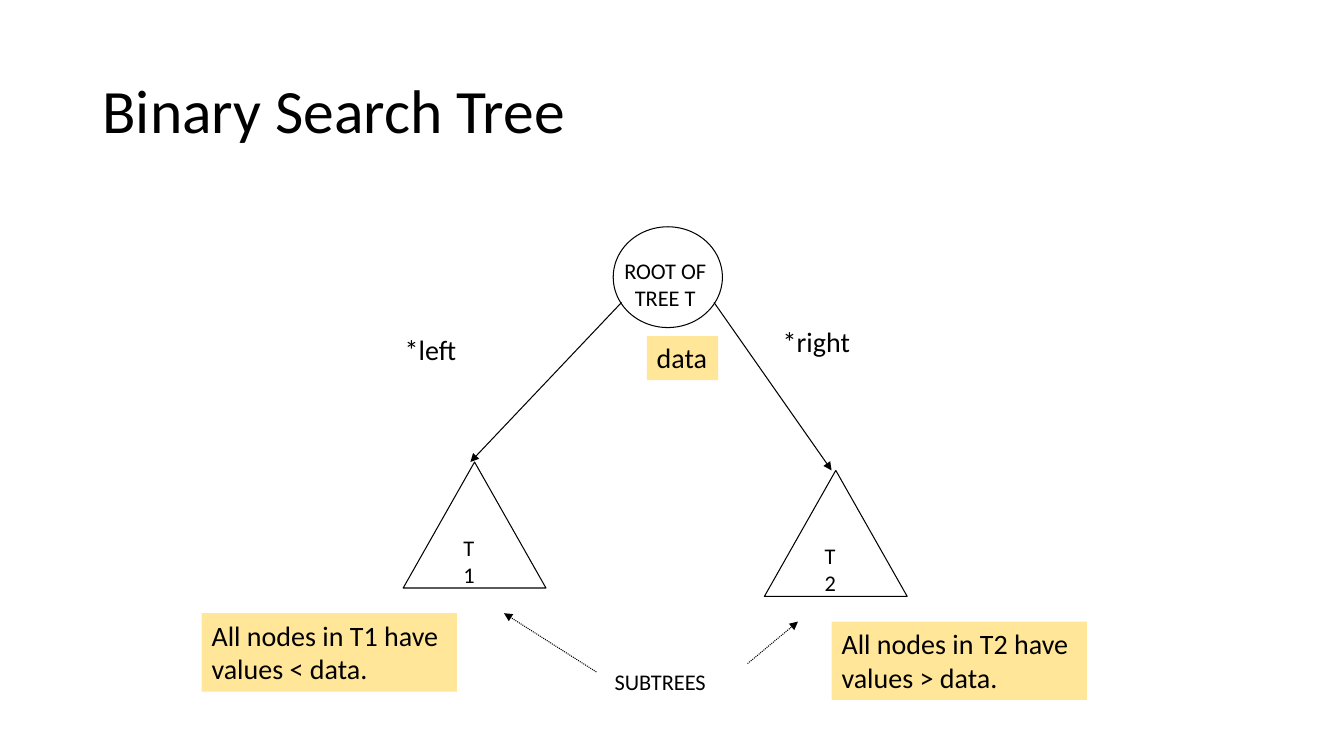
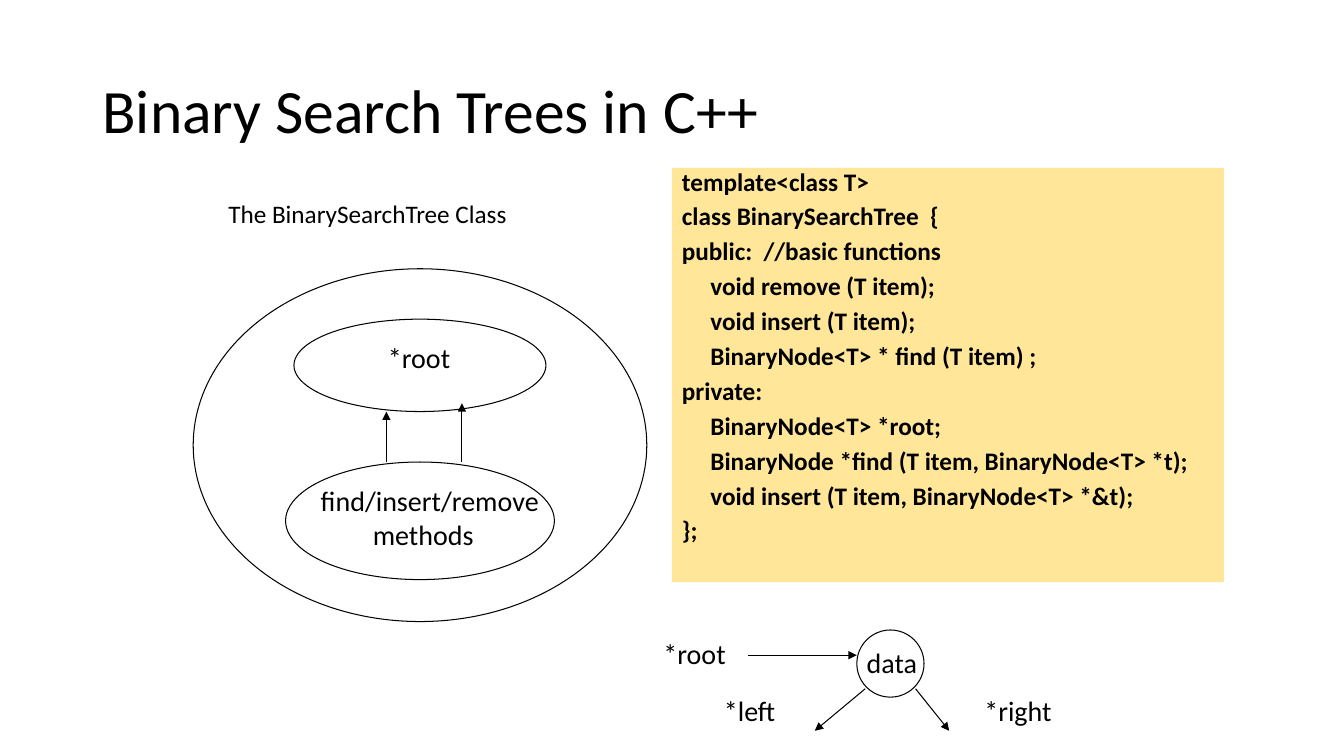
from dataclasses import dataclass
from typing import Sequence

from lxml.etree import SubElement
from pptx import Presentation
from pptx.dml.color import RGBColor
from pptx.enum.dml import MSO_LINE
from pptx.enum.shapes import MSO_CONNECTOR, MSO_SHAPE
from pptx.enum.text import MSO_ANCHOR, PP_ALIGN
from pptx.oxml.ns import qn
from pptx.slide import Slide
from pptx.text.text import _Paragraph as Para
from pptx.util import Emu, Inches, Pt

WIDE, HIGH = Inches(13.33), Inches(7.5)
COLS, ROWS = 160, 90
INK, SAND = "000000", "FFE699"
FONT = "Calibri"
OVAL, CONE = MSO_SHAPE.OVAL, MSO_SHAPE.FLOWCHART_EXTRACT


@dataclass(frozen=True)
class Node:
    kind: MSO_SHAPE
    col: float
    row: float
    cols: float
    rows: float


@dataclass(frozen=True)
class Arrow:
    start: tuple[float, float]
    end: tuple[float, float]
    dotted: bool = False


@dataclass(frozen=True)
class Line:
    text: str
    inset: float = 0


@dataclass(frozen=True)
class Label:
    lines: Sequence[Line]
    col: float
    row: float
    cols: float
    size: int = 20
    fill: str = ""
    align: PP_ALIGN = PP_ALIGN.LEFT


@dataclass(frozen=True)
class Code:
    lines: Sequence[Line]
    col: float
    row: float
    cols: float
    rows: float


def across(cols: float) -> Emu:
    return Emu(round(WIDE * cols / COLS))


def down(rows: float) -> Emu:
    return Emu(round(HIGH * rows / ROWS))


def paint(code: str) -> RGBColor:
    return RGBColor.from_string(code)


def write(para: Para, text: str, size: int, bold: bool = False) -> None:
    run = para.add_run()
    run.text = text
    run.font.name = FONT
    run.font.size = Pt(size)
    run.font.bold = bold
    run.font.color.rgb = paint(INK)


def fill_text(frame, lines: Sequence[Line], size: int, bold: bool = False) -> None:
    for rank, line in enumerate(lines):
        para = frame.add_paragraph() if rank else frame.paragraphs[0]
        para.alignment = PP_ALIGN.LEFT
        if line.inset:
            props = para._p.get_or_add_pPr()
            props.set("marL", str(across(line.inset)))
            props.set("indent", "0")
        write(para, line.text, size, bold)


def add_title(slide: Slide, text: str) -> None:
    title = slide.shapes.title
    title.left, title.top = across(11), down(4.8)
    title.width, title.height = across(138), down(17.4)
    title.text_frame.vertical_anchor = MSO_ANCHOR.MIDDLE
    para = title.text_frame.paragraphs[0]
    para.alignment = PP_ALIGN.LEFT
    para.line_spacing = 0.9
    write(para, text, 44)


def add_node(slide: Slide, node: Node) -> None:
    shape = slide.shapes.add_shape(
        node.kind, across(node.col), down(node.row), across(node.cols), down(node.rows))
    shape.shadow.inherit = False
    shape.fill.background()
    shape.line.color.rgb = paint(INK)
    shape.line.width = Pt(0.75)


def add_arrow(slide: Slide, arrow: Arrow) -> None:
    (left, top), (right, base) = arrow.start, arrow.end
    link = slide.shapes.add_connector(
        MSO_CONNECTOR.STRAIGHT, across(left), down(top), across(right), down(base))
    link.line.color.rgb = paint(INK)
    link.line.width = Pt(0.75)
    if arrow.dotted:
        link.line.dash_style = MSO_LINE.ROUND_DOT
    props = link._element.spPr
    SubElement(props.find(qn("a:ln")), qn("a:tailEnd"), type="triangle")
    SubElement(props, qn("a:effectLst"))


def add_label(slide: Slide, label: Label) -> None:
    high = Pt(len(label.lines) * label.size * 1.22) + Inches(0.1)
    box = slide.shapes.add_textbox(
        across(label.col), down(label.row), across(label.cols), high)
    if label.fill:
        box.fill.solid()
        box.fill.fore_color.rgb = paint(label.fill)
    box.text_frame.word_wrap = False
    fill_text(box.text_frame, label.lines, label.size)
    for para in box.text_frame.paragraphs:
        para.alignment = label.align


def add_code(slide: Slide, code: Code) -> None:
    box = slide.shapes.add_textbox(
        across(code.col), down(code.row), across(code.cols), down(code.rows))
    box.fill.solid()
    box.fill.fore_color.rgb = paint(SAND)
    box.text_frame.word_wrap = True
    fill_text(box.text_frame, code.lines, 18, bold=True)
    for para in box.text_frame.paragraphs:
        para.line_spacing = 0.75
        para.space_before = Pt(8.7)


DRAW = {Node: add_node, Arrow: add_arrow, Label: add_label, Code: add_code}


def left_tag(col: float, row: float) -> Label:
    return Label([Line("*left")], col, row, 8.8)


def right_tag(col: float, row: float) -> Label:
    return Label([Line("*right")], col, row, 10.6)


def root_tag(col: float, row: float) -> Label:
    return Label([Line("*root")], col, row, 10)


def data_tag(col: float, row: float, fill: str = "") -> Label:
    return Label([Line("data")], col, row, 8.5, fill=fill)


def branch(name: str, sign: str, col: float, row: float, note: float) -> list:
    return [
        Node(CONE, col, row, 17, 15),
        Label([Line(name)], col + 6, row + 8, 5, 16),
        Label([Line(f"All nodes in {name} have"), Line(f"values {sign} data.")],
              note, row + 18, 30.4, fill=SAND),
    ]


TREE = [
    Node(OVAL, 73, 27, 13, 12),
    *branch("T1", "<", 48, 55, 24),
    *branch("T2", ">", 91, 56, 99),
    Arrow((74, 36), (56, 55)),
    Arrow((85, 36), (99, 56)),
    Label([Line("ROOT OF"), Line("TREE T")], 73, 30, 12.4, 16, align=PP_ALIGN.CENTER),
    Label([Line("SUBTREES")], 72, 79, 13.4, 16),
    Arrow((89, 79), (95, 74), dotted=True),
    Arrow((71, 80), (60, 73), dotted=True),
    left_tag(47, 39),
    right_tag(92, 38),
    data_tag(77, 40, SAND),
]

STEP = 3.4
SOURCE = [
    Line("template<class T>"),
    Line("class BinarySearchTree  {"),
    Line("public:  //basic functions"),
    Line("void remove (T item);", STEP),
    Line("void insert (T item);", STEP),
    Line("BinaryNode<T> * find (T item) ;", STEP),
    Line("private:"),
    Line("BinaryNode<T> *root;", STEP),
    Line("BinaryNode *find (T item, BinaryNode<T> *t);", STEP),
    Line("void insert (T item, BinaryNode<T> *&t);", STEP),
    Line("};"),
]

CLASS = [
    Node(OVAL, 23, 32, 54, 42),
    Node(OVAL, 35, 38, 30, 11),
    Node(OVAL, 34, 55, 32, 14),
    root_tag(45, 40),
    Label([Line("find/insert/remove"), Line("methods", 6.2)], 37, 57, 28.7),
    Label([Line("The BinarySearchTree Class")], 26, 23, 35.9, 18),
    Arrow((46, 55), (46, 49)),
    Arrow((55, 55), (55, 48)),
    Code(SOURCE, 80, 20, 65.7, 49.3),
    Node(OVAL, 102, 75, 8, 8),
    Arrow((103, 82), (97, 87)),
    Arrow((109, 82), (113, 87)),
    left_tag(85, 82),
    right_tag(116, 82),
    data_tag(102, 76.2),
    root_tag(77.8, 75.2),
    Arrow((89, 78), (102, 78)),
]


def main() -> None:
    deck = Presentation()
    deck.slide_width, deck.slide_height = WIDE, HIGH
    for title, parts in (("Binary Search Tree", TREE),
                         ("Binary Search Trees in C++", CLASS)):
        slide = deck.slides.add_slide(deck.slide_layouts[5])
        add_title(slide, title)
        for part in parts:
            DRAW[type(part)](slide, part)
    deck.save("out.pptx")


if __name__ == "__main__":
    main()
